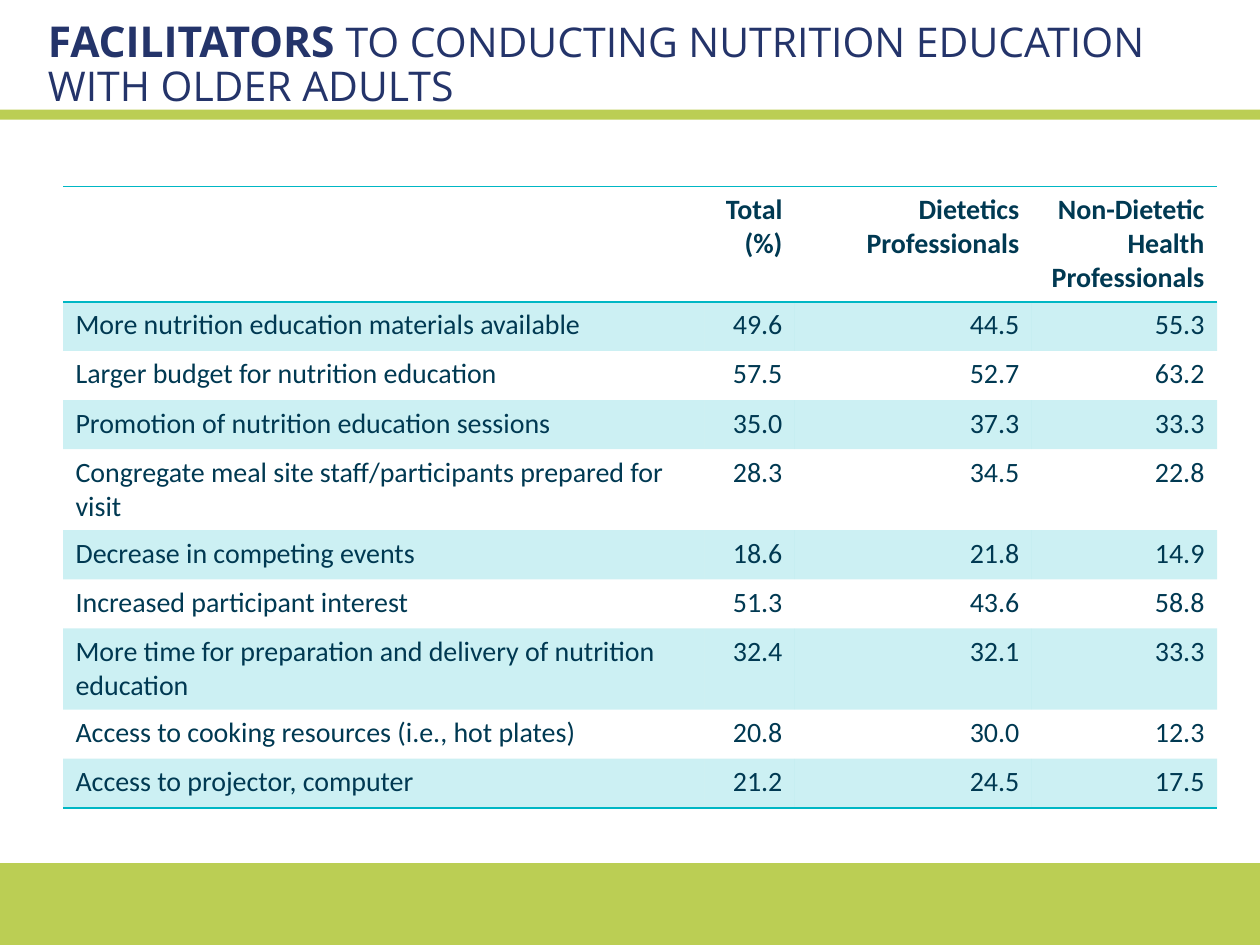
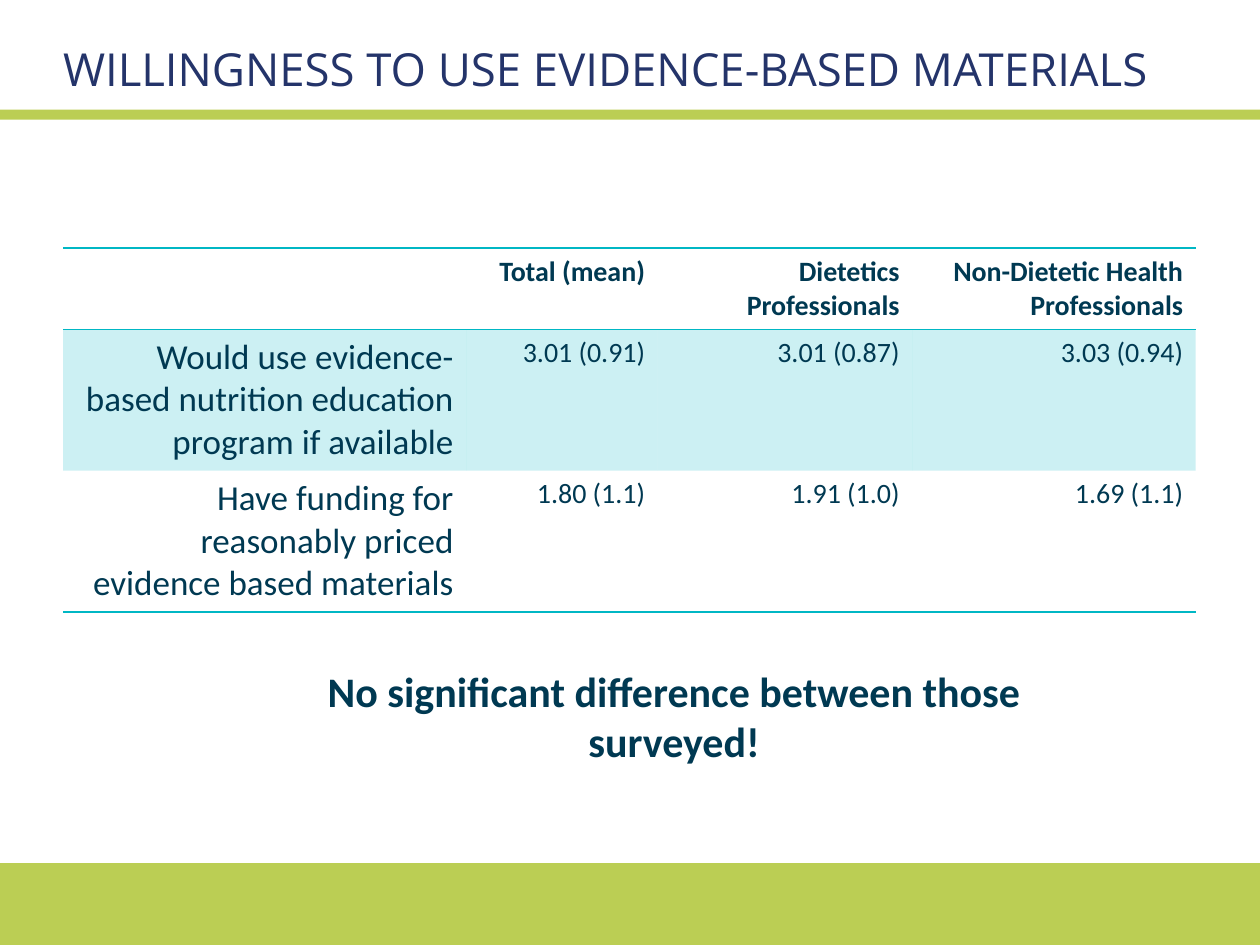
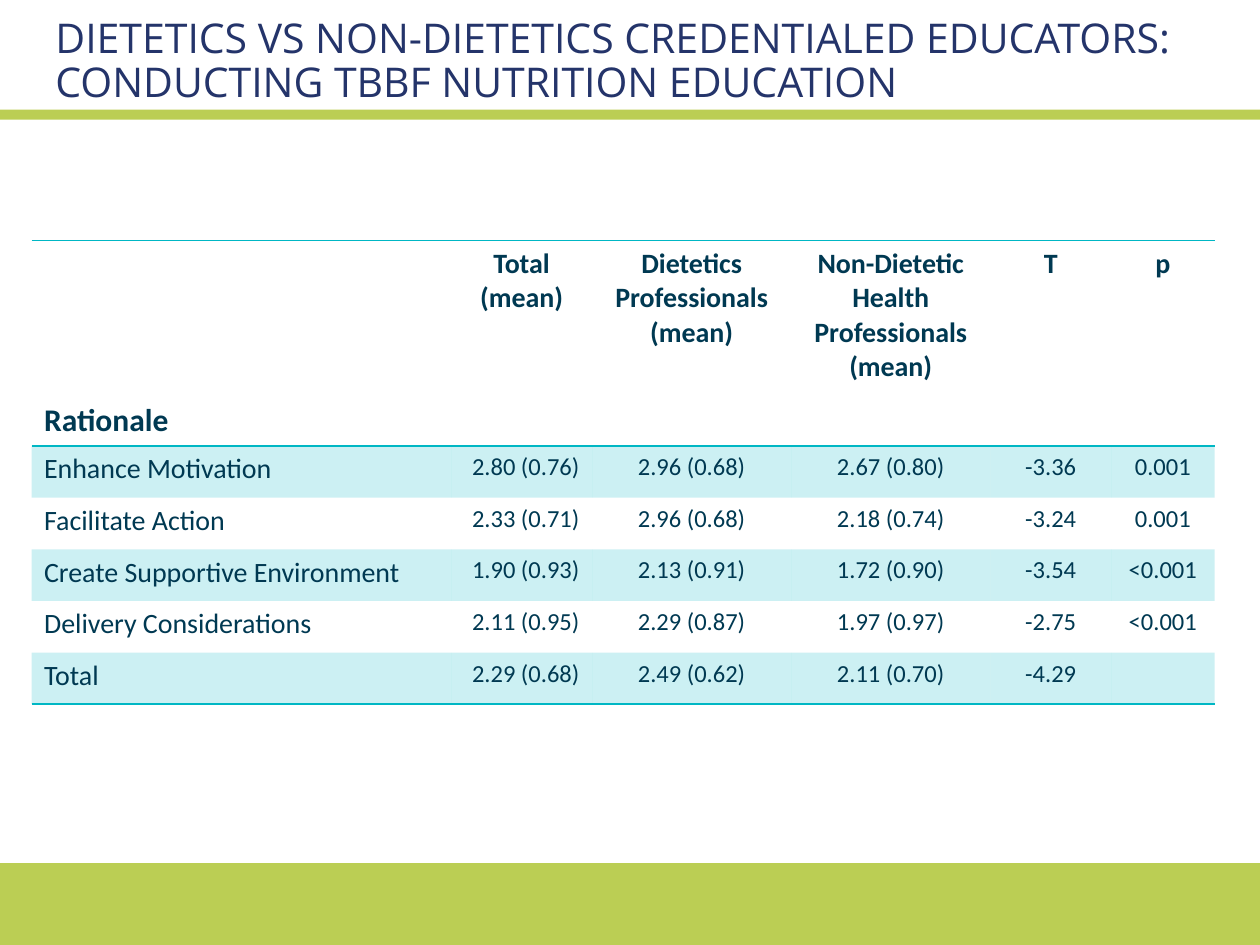
from dataclasses import dataclass
from typing import Any, NamedTuple

import lxml.etree
import pptx
import pptx.dml.color
import pptx.enum.shapes
import pptx.enum.text
import pptx.oxml.ns
import pptx.util

Inches = pptx.util.Inches
Pt = pptx.util.Pt
Align = pptx.enum.text.PP_ALIGN
Anchor = pptx.enum.text.MSO_ANCHOR
qn = pptx.oxml.ns.qn

SIDES = {"l": Align.LEFT, "c": Align.CENTER, "r": Align.RIGHT}


@dataclass(frozen=True)
class Theme:
    green: str = "BBCE54"
    navy: str = "24346A"
    ink: str = "003952"
    teal: str = "00B7C4"
    tint: int = 20
    head: str = "Open Sans"
    body: str = "Calibri"
    title: float = 23.4
    strong: float = 24.3
    large: float = 26
    note: float = 24
    label: float = 20
    corner: float = 18
    cell: float = 16
    small: float = 14
    rule: float = 1
    plain: str = "{2D5ABB26-0587-4C30-8999-92F81FD0307C}"


THEME = Theme()


class Box(NamedTuple):
    left: float
    top: float
    width: float
    height: float

    def place(self) -> list[int]:
        return [Inches(side) for side in self]


class Span(NamedTuple):
    text: str
    size: float = THEME.title
    bold: bool = False


@dataclass(frozen=True)
class Grid:
    left: float
    top: float
    widths: list[float]
    heights: list[float]
    rows: list[list[str]]
    heads: str
    sides: str
    corner: float = THEME.cell
    label: float = THEME.cell
    value: float = THEME.cell


@dataclass(frozen=True)
class Page:
    box: Box
    title: list[Span]
    grid: Grid


BANDS = [Box(0, 6.85, 10, 0.65), Box(0, 0.87, 10, 0.08)]
NOTE = Box(1.88, 5.23, 6.94, 0.91)
ROW, DEEP = 0.39, 0.64
DIET = "Dietetics Professionals"
OTHER = "Non-Dietetic Health Professionals"

PAGES = [
    Page(
        Box(0.38, 0.25, 9, 0.54),
        [Span("FACILITATORS ", THEME.strong, True),
         Span("TO CONDUCTING NUTRITION EDUCATION WITH OLDER ADULTS")],
        Grid(
            0.5, 1.48, [5.09, 0.72, 1.88, 1.47],
            [0.91, ROW, ROW, ROW, DEEP, ROW, ROW, DEEP, ROW, ROW],
            [
                ["", "Total (%)", DIET, OTHER],
                ["More nutrition education materials available", "49.6", "44.5", "55.3"],
                ["Larger budget for nutrition education", "57.5", "52.7", "63.2"],
                ["Promotion of nutrition education sessions", "35.0", "37.3", "33.3"],
                ["Congregate meal site staff/participants prepared for visit",
                 "28.3", "34.5", "22.8"],
                ["Decrease in competing events", "18.6", "21.8", "14.9"],
                ["Increased participant interest", "51.3", "43.6", "58.8"],
                ["More time for preparation and delivery of nutrition education",
                 "32.4", "32.1", "33.3"],
                ["Access to cooking resources (i.e., hot plates)", "20.8", "30.0", "12.3"],
                ["Access to projector, computer", "21.2", "24.5", "17.5"],
            ],
            "lrrr", "lrrr",
        ),
    ),
    Page(
        Box(0.5, 0.3, 9, 0.54),
        [Span("WILLINGNESS TO USE EVIDENCE-BASED MATERIALS", THEME.large)],
        Grid(
            0.5, 1.97, [3.2, 1.52, 2.02, 2.25], [0.64, 1.12, 1.12],
            [
                ["", "Total (mean)", DIET, OTHER],
                ["Would use evidence-based nutrition education program if available",
                 "3.01 (0.91)", "3.01 (0.87)", "3.03 (0.94)"],
                ["Have funding for reasonably priced evidence based materials",
                 "1.80 (1.1)", "1.91 (1.0)", "1.69 (1.1)"],
            ],
            "rrrr", "rrrr", label=THEME.label,
        ),
    ),
    Page(
        Box(0.44, 0, 9.56, 0.99),
        [Span("DIETETICS VS NON-DIETETICS CREDENTIALED EDUCATORS: \v"
              "CONDUCTING TBBF NUTRITION EDUCATION")],
        Grid(
            0.25, 1.91, [3.33, 1.12, 1.58, 1.58, 0.96, 0.82], [1.63] + [0.41] * 5,
            [
                ["Rationale", "Total (mean)", f"{DIET} (mean)", f"{OTHER}\n(mean)", "T", "p"],
                ["Enhance Motivation",
                 "2.80 (0.76)", "2.96 (0.68)", "2.67 (0.80)", "-3.36", "0.001"],
                ["Facilitate Action",
                 "2.33 (0.71)", "2.96 (0.68)", "2.18 (0.74)", "-3.24", "0.001"],
                ["Create Supportive Environment",
                 "1.90 (0.93)", "2.13 (0.91)", "1.72 (0.90)", "-3.54", "<0.001"],
                ["Delivery Considerations",
                 "2.11 (0.95)", "2.29 (0.87)", "1.97 (0.97)", "-2.75", "<0.001"],
                ["Total", "2.29 (0.68)", "2.49 (0.62)", "2.11 (0.70)", "-4.29", ""],
            ],
            "lccccc", "lrcccc", corner=THEME.corner, value=THEME.small,
        ),
    ),
]


def assign(item: Any, values: dict[str, Any]) -> None:
    for name, value in values.items():
        setattr(item, name, value)


def paint(color: Any, code: str) -> None:
    color.rgb = pptx.dml.color.RGBColor.from_string(code)


def style(font: Any, face: str, size: float, bold: bool, code: str) -> None:
    assign(font, {"name": face, "size": Pt(size), "bold": bold})
    paint(font.color, code)


def write(frame: Any, text: str, size: float, bold: bool, side: str) -> None:
    """Fill a frame with one body paragraph per line of text."""
    frame.text = text
    for para in frame.paragraphs:
        para.alignment = SIDES[side]
        for run in para.runs:
            style(run.font, THEME.body, size, bold, THEME.ink)


def share(slide: Any) -> None:
    """Put the bands on the layout, behind its placeholders."""
    tree = slide.slide_layout.shapes.element
    for num, box in enumerate(BANDS):
        band = slide.shapes.add_shape(
            pptx.enum.shapes.MSO_SHAPE.RECTANGLE, *box.place())
        band.shadow.inherit = False
        band.fill.solid()
        paint(band.fill.fore_color, THEME.green)
        band.line.fill.background()
        band.element.nvSpPr.cNvPr.id = 20 + num
        tree.insert(2 + num, band.element)


def head(slide: Any, page: Page) -> None:
    """Place and format the title."""
    title = slide.shapes.title
    assign(title, dict(zip(("left", "top", "width", "height"), page.box.place())))
    frame = title.text_frame
    assign(frame, {
        "margin_left": 0, "margin_top": 0, "margin_right": 0, "margin_bottom": 0,
        "word_wrap": True, "vertical_anchor": Anchor.MIDDLE,
        "auto_size": pptx.enum.text.MSO_AUTO_SIZE.NONE,
    })
    para = frame.paragraphs[0]
    assign(para, {"alignment": Align.LEFT, "line_spacing": 0.9})
    for span in page.title:
        for num, text in enumerate(span.text.split("\v")):
            if num:
                para.add_line_break()
            run = para.add_run()
            run.text = text
            style(run.font, THEME.head, span.size, span.bold, THEME.navy)


def tint(cell: Any) -> None:
    cell.fill.solid()
    paint(cell.fill.fore_color, THEME.teal)
    color = cell._tc.get_or_add_tcPr().find(".//" + qn("a:srgbClr"))
    lxml.etree.SubElement(color, qn("a:alpha"), val=str(THEME.tint * 1000))


def rule(cell: Any, edges: list[str]) -> None:
    """Draw the given cell edges, which come before the fill."""
    props = cell._tc.get_or_add_tcPr()
    for num, edge in enumerate(edges):
        line = lxml.etree.Element(qn(f"a:{edge}"), w=str(Pt(THEME.rule)))
        fill = lxml.etree.SubElement(line, qn("a:solidFill"))
        lxml.etree.SubElement(fill, qn("a:srgbClr"), val=THEME.teal)
        props.insert(num, line)


def chart(slide: Any, grid: Grid) -> None:
    """Draw the table with ruled header, tinted odd rows and ruled foot."""
    box = Box(grid.left, grid.top, sum(grid.widths), sum(grid.heights))
    frame = slide.shapes.add_table(len(grid.rows), len(grid.widths), *box.place())
    table = frame.table
    frame.element.find(".//" + qn("a:tableStyleId")).text = THEME.plain
    assign(table, {"first_row": False, "horz_banding": False})
    for col, width in zip(table.columns, grid.widths):
        col.width = Inches(width)
    for row, height in zip(table.rows, grid.heights):
        row.height = Inches(height)
    last = len(grid.rows) - 1
    for y, row in enumerate(grid.rows):
        sides = grid.sides if y else grid.heads
        for x, text in enumerate(row):
            cell = table.cell(y, x)
            size = grid.value if x else grid.label
            if y == 0:
                size = THEME.cell if x else grid.corner
            write(cell.text_frame, text, size, y == 0, sides[x])
            if y % 2:
                tint(cell)
            else:
                cell.fill.background()
            if y == 0:
                rule(cell, ["lnT", "lnB"])
            elif y == last:
                rule(cell, ["lnB"])
    table.cell(0, 0).vertical_anchor = Anchor.BOTTOM


def note(slide: Any, text: str) -> None:
    frame = slide.shapes.add_textbox(*NOTE.place()).text_frame
    pad = Inches(0.05)
    assign(frame, {
        "word_wrap": True, "margin_left": pad, "margin_right": pad,
        "margin_top": pad, "margin_bottom": pad,
        "auto_size": pptx.enum.text.MSO_AUTO_SIZE.SHAPE_TO_FIT_TEXT,
    })
    write(frame, text, THEME.note, True, "c")


def main() -> None:
    deck = pptx.Presentation()
    assign(deck, {"slide_width": Inches(10), "slide_height": Inches(7.5)})
    layout = deck.slide_layouts.get_by_name("Title Only")
    slides = [deck.slides.add_slide(layout) for _ in PAGES]
    share(slides[0])
    for slide, page in zip(slides, PAGES):
        head(slide, page)
        chart(slide, page.grid)
    note(slides[1], "No significant difference between those surveyed!")
    deck.save("out.pptx")


if __name__ == "__main__":
    main()
